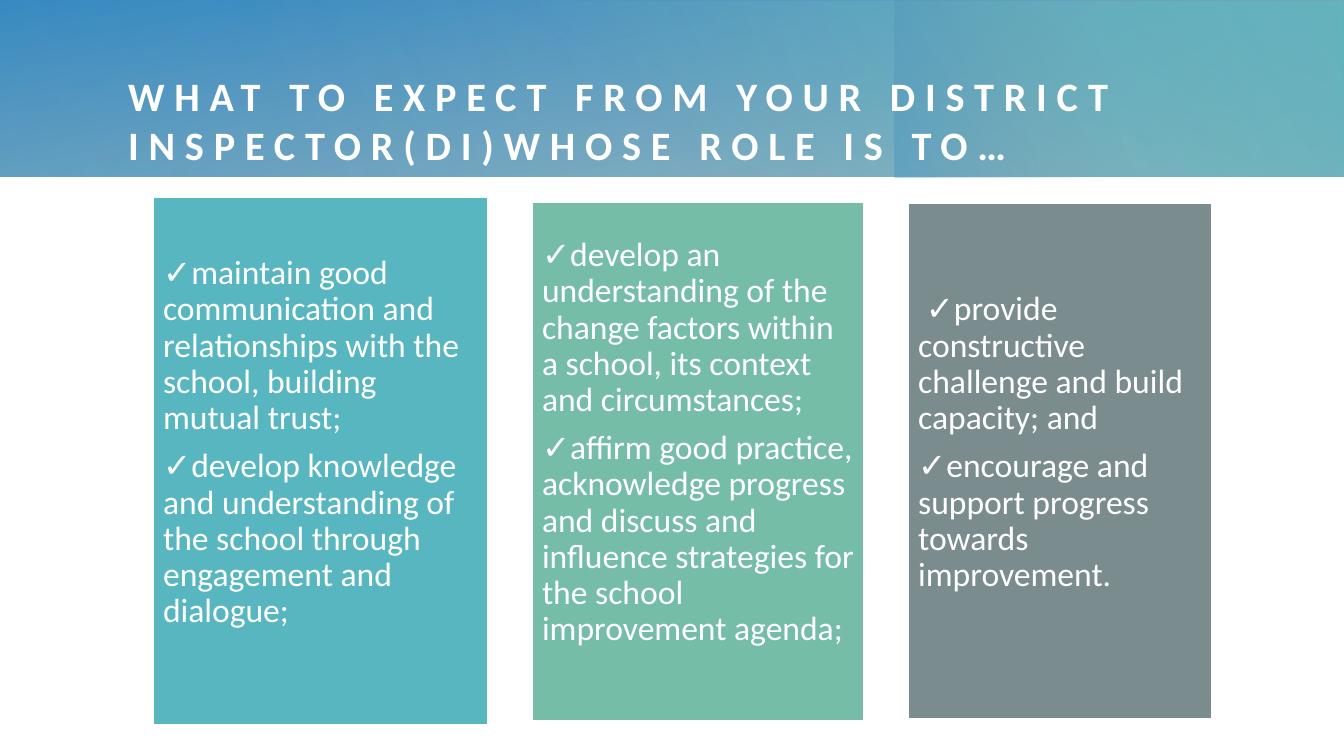
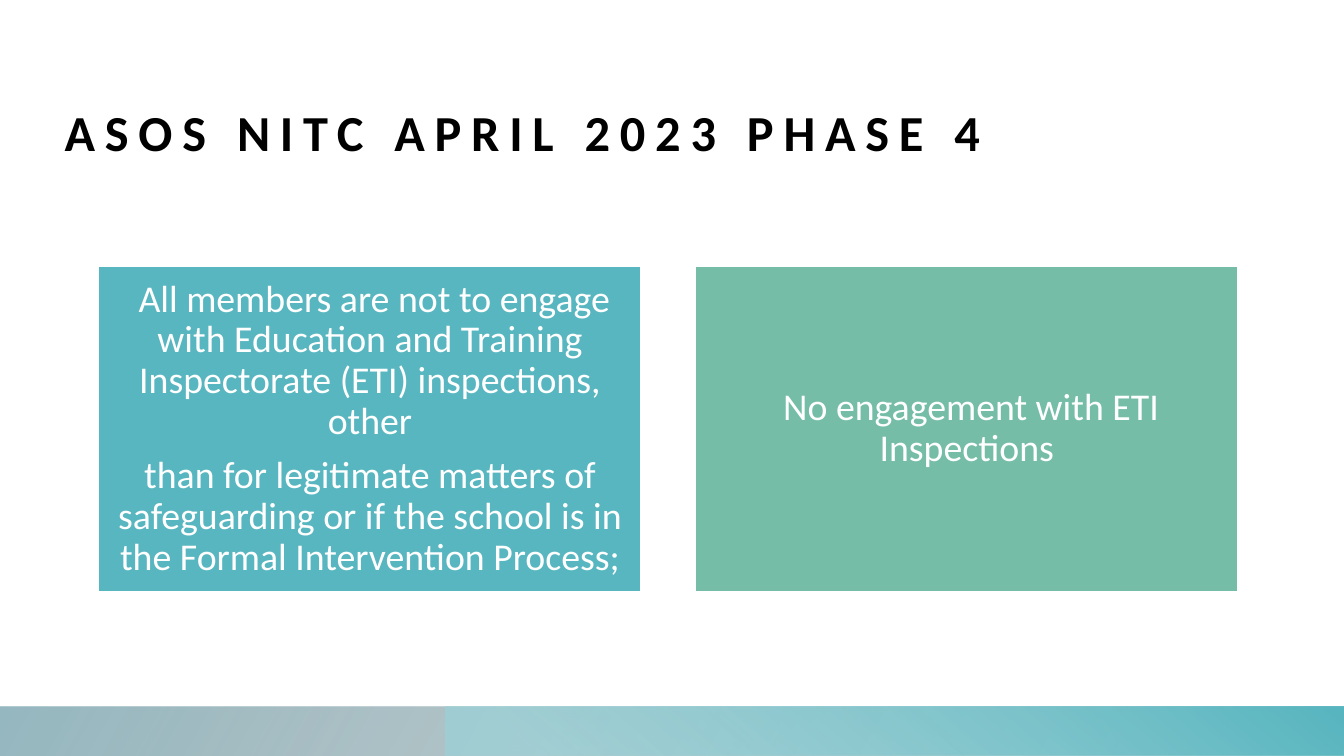
import dataclasses

import lxml.etree
import pptx
import pptx.dml.color
import pptx.enum.shapes
import pptx.enum.text
import pptx.oxml.ns
import pptx.util

Cm, Pt = pptx.util.Cm, pptx.util.Pt
Rgb = pptx.dml.color.RGBColor
Align = pptx.enum.text.PP_ALIGN
Anchor = pptx.enum.text.MSO_ANCHOR
Kind = pptx.enum.shapes.MSO_SHAPE
qn = pptx.oxml.ns.qn


@dataclasses.dataclass(frozen=True)
class Theme:
    # Colours
    white: str = "FFFFFF"
    black: str = "000000"
    blue: str = "2683C6"
    teal: str = "58B6C0"
    aqua: str = "9BD3D9"
    green: str = "75BDA7"
    slate: str = "7A8C8E"
    mist: str = "84ACB6"
    # Type
    font: str = "Calibri"
    head: float = 36
    long_head: float = 28.8
    body: float = 24
    card: float = 27
    track: int = 700
    # Page, in cm
    wide: float = 33.87
    high: float = 19.05


def put(target, values):
    for name, value in values.items():
        setattr(target, name, value)


class Deck:
    def __init__(self, theme):
        self.theme = theme
        self.file = pptx.Presentation()
        put(self.file, {"slide_width": Cm(theme.wide), "slide_height": Cm(theme.high)})

    def page(self):
        self.slide = self.file.slides.add_slide(self.file.slide_layouts[6])

    def rect(self, *box):
        shape = self.slide.shapes.add_shape(Kind.RECTANGLE, *map(Cm, box))
        shape.shadow.inherit = False
        return shape

    def fade(self, box, stops, angle, turn=0, flip=False):
        """Gradient band; stops are (position, colour, opacity), angle runs clockwise."""
        shape = self.rect(*box)
        shape.rotation = turn
        shape.line.fill.background()
        shape.fill.gradient()
        shape.fill.gradient_angle = 360 - angle
        props = shape._element.spPr
        for stop, (place, colour, _) in zip(shape.fill.gradient_stops, stops):
            stop.color.rgb = Rgb.from_string(colour)
            stop.position = place / 100
        for node, (_, _, alpha) in zip(props.iter(qn("a:srgbClr")), stops):
            lxml.etree.SubElement(node, qn("a:alpha"), val=str(alpha * 1000))
        if flip:
            props.find(qn("a:xfrm")).set("flipH", "1")

    def text(self, frame, lines, size, colour, para, bold=False):
        for i, line in enumerate(lines):
            p = frame.paragraphs[0] if i == 0 else frame.add_paragraph()
            put(p, para)
            run = p.add_run()
            run.text = line
            put(run.font, {"name": self.theme.font, "size": Pt(size), "bold": bold})
            run.font.color.rgb = Rgb.from_string(colour)

    def title(self, box, words, size, colour):
        frame = self.slide.shapes.add_textbox(*map(Cm, box)).text_frame
        put(frame, {"word_wrap": True, "vertical_anchor": Anchor.BOTTOM,
                    "margin_left": 0, "margin_top": 0,
                    "margin_right": 0, "margin_bottom": 0})
        self.text(frame, [words], size, colour, {"alignment": Align.LEFT}, True)
        for props in frame._txBody.iter(qn("a:rPr")):
            props.set("spc", str(self.theme.track))

    def row(self, left, mid, gap, cards, size, align, pad, lift=0):
        """Cards side by side, centred on one level; lift raises their text."""
        for wide, high, colour, lines in cards:
            shape = self.rect(left, mid - high / 2, wide, high)
            shape.fill.solid()
            shape.fill.fore_color.rgb = Rgb.from_string(colour)
            shape.line.color.rgb = Rgb.from_string(self.theme.white)
            shape.line.width = Pt(1)
            put(shape.text_frame, {
                "word_wrap": True, "vertical_anchor": Anchor.MIDDLE,
                "margin_left": Cm(pad), "margin_right": Cm(pad),
                "margin_top": Cm(pad), "margin_bottom": Cm(pad + lift)})
            para = {"alignment": align, "line_spacing": 0.9,
                    "space_after": Pt(size * 0.35)}
            self.text(shape.text_frame, lines, size, self.theme.white, para)
            left += wide + gap


def role(deck):
    t = deck.theme
    deck.page()

    # Header band
    band = 4.45
    deck.fade((0, 0, t.wide, band), [(0, t.mist, 83), (100, t.blue, 100)], 260)
    deck.fade((12.22, 0.03, 21.65, 4.42), [(22, t.teal, 0), (99, t.teal, 100)], 310)
    deck.fade((25.07, -2.51, band, 9.5), [(45, t.slate, 0), (99, t.blue, 33)], 250, 270)
    deck.fade((6.81, 0, 27.03, band), [(0, t.mist, 30), (99, t.mist, 0)], 330, 180)
    deck.fade((0, 0, 21.97, band), [(0, t.mist, 21), (99, t.mist, 0)], 340)
    deck.title((3.23, 1.04, 29.34, 3.2),
               "WHAT TO EXPECT FROM YOUR DISTRICT INSPECTOR(DI)WHOSE ROLE IS TO…",
               t.long_head, t.white)

    # Columns
    deck.row(3.86, 11.62, 1.12, [
        (8.43, 13.28, t.teal, [
            "✓maintain good communication and relationships with the school, "
            "building mutual trust;",
            "✓develop knowledge and understanding of the school through "
            "engagement and dialogue;"]),
        (8.36, 13.06, t.green, [
            "✓develop an understanding of the change factors within a school, "
            "its context and circumstances;",
            "✓affirm good practice, acknowledge progress and discuss and "
            "influence strategies for the school improvement agenda;"]),
        (7.65, 13, t.slate, [
            " ✓provide constructive challenge and build capacity; and",
            "✓encourage and support progress towards improvement."]),
    ], t.body, Align.LEFT, 0.25, 0.92)


def phase(deck):
    t = deck.theme
    deck.page()
    deck.title((1.63, 1.27, 29.77, 2.79), "ASOS NITC APRIL 2023 PHASE 4", t.head, t.black)

    # Footer band
    top, high, start = 17.81, 1.24, 11.22
    deck.fade((0, top, t.wide, high), [(14, t.slate, 28), (100, t.mist, 85)],
              150, 180, True)
    deck.fade((start, top, t.wide - start, high), [(9, t.aqua, 68), (99, t.teal, 100)],
              230, 0, True)

    # Cards
    size = (13.67, 8.2)
    deck.row(2.49, 10.81, 1.37, [
        (*size, t.teal, [
            " All members are not to engage with Education and Training "
            "Inspectorate (ETI) inspections, other",
            "than for legitimate matters of safeguarding or if the school is in "
            "the Formal Intervention Process;"]),
        (*size, t.green, [" No engagement with ETI Inspections"]),
    ], t.card, Align.CENTER, 0.28)


def main():
    deck = Deck(Theme())
    role(deck)
    phase(deck)
    deck.file.save("out.pptx")


if __name__ == "__main__":
    main()
